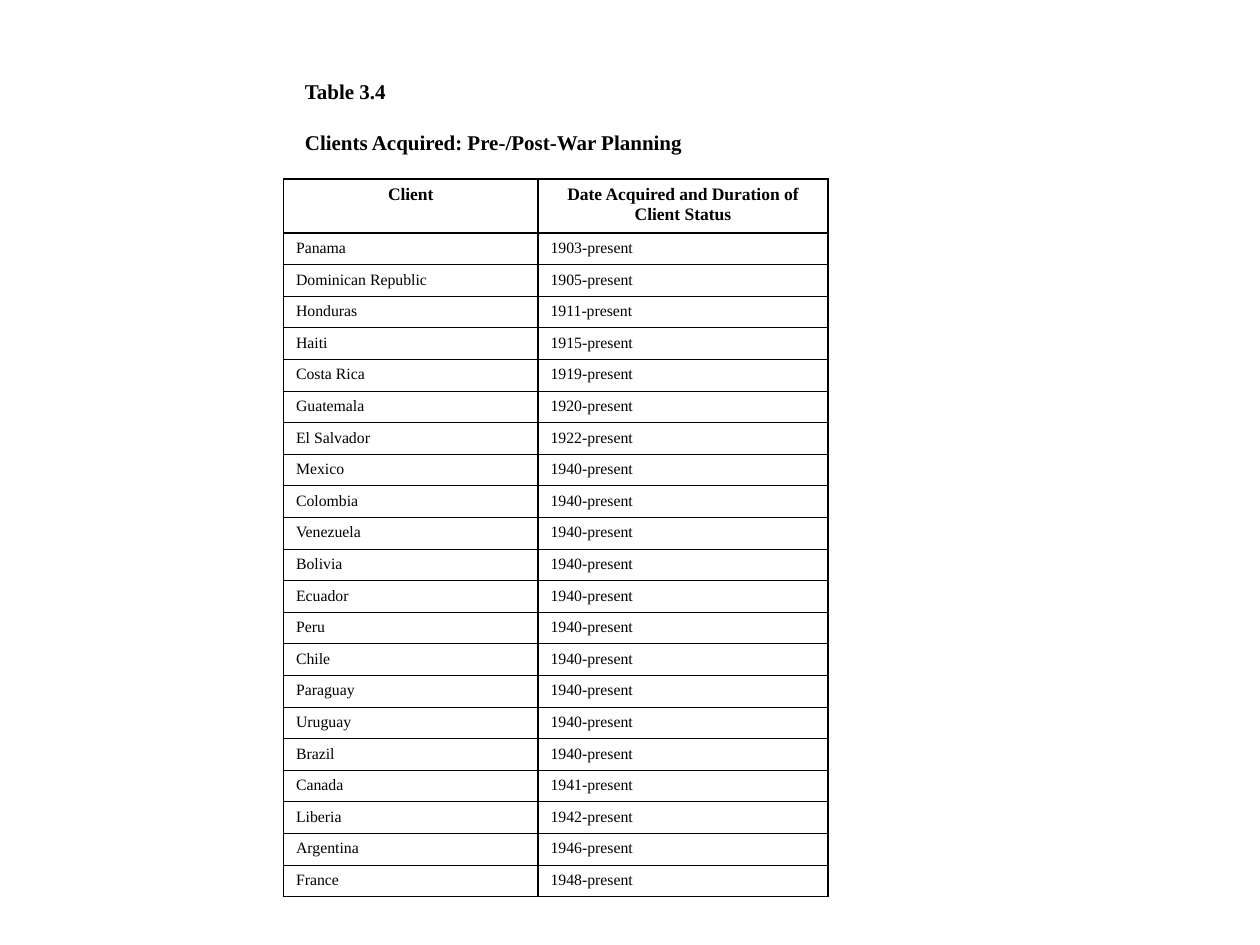
"""Build the slide that lists clients acquired in pre- and post-war planning."""
from lxml import etree
from pptx import Presentation
from pptx.dml.color import RGBColor
from pptx.enum.text import MSO_ANCHOR, MSO_AUTO_SIZE, PP_ALIGN
from pptx.oxml.ns import qn
from pptx.util import Inches, Pt

TOP = MSO_ANCHOR.TOP
FIXED = MSO_AUTO_SIZE.NONE
LEFT, CENTER = PP_ALIGN.LEFT, PP_ALIGN.CENTER
TITLE_ONLY = 5
HEADING = ["Table 3.4", "Clients Acquired: Pre-/Post-War Planning"]
HEADERS = ("Client", "Date Acquired and Duration of Client Status")
CLIENTS_BY_YEAR = {
    1903: ["Panama"],
    1905: ["Dominican Republic"],
    1911: ["Honduras"],
    1915: ["Haiti"],
    1919: ["Costa Rica"],
    1920: ["Guatemala"],
    1922: ["El Salvador"],
    1940: ["Mexico", "Colombia", "Venezuela", "Bolivia", "Ecuador",
           "Peru", "Chile", "Paraguay", "Uruguay", "Brazil"],
    1941: ["Canada"],
    1942: ["Liberia"],
    1946: ["Argentina"],
    1948: ["France"],
}


def color(value):
    return RGBColor.from_string(value)


def write(para, text, size=9, bold=False, align=LEFT, before=0, font="Times New Roman", ink="000000"):
    para.alignment = align
    para.space_before = Pt(before)
    span = para.add_run()
    span.text = text
    span.font.name = font
    span.font.size = Pt(size)
    span.font.bold = bold
    span.font.color.rgb = color(ink)


class Page:
    def __init__(self, deck, ink="000000"):
        self.deck = deck
        self.ink = ink
        self.slide = deck.slides.add_slide(deck.slide_layouts[TITLE_ONLY])

    def across(self, share):
        return round(self.deck.slide_width * share)

    def down(self, share):
        return round(self.deck.slide_height * share)

    def title(self, lines, left, top, width, height):
        box = self.slide.shapes.title
        box.left, box.top = self.across(left), self.down(top)
        box.width, box.height = self.across(width), self.down(height)
        frame = box.text_frame
        frame.word_wrap = True
        frame.auto_size = FIXED
        frame.vertical_anchor = TOP
        frame.margin_left = frame.margin_right = 0
        frame.margin_top, frame.margin_bottom = Inches(0.17), Inches(0.04)
        for index, line in enumerate(lines):
            para = frame.add_paragraph() if index else frame.paragraphs[0]
            write(para, line, size=12, bold=True, before=15 if index else 0, ink=self.ink)

    def borders(self, cell, **widths):
        properties = cell._tc.get_or_add_tcPr()
        for index, side in enumerate("LRTB"):
            line = etree.Element(qn(f"a:ln{side}"), w=str(Pt(widths[side])))
            fill = etree.SubElement(line, qn("a:solidFill"))
            etree.SubElement(fill, qn("a:srgbClr"), val=self.ink)
            properties.insert(index, line)

    def table(self, rows, left, top, columns, header_height, row_height):
        heights = [header_height] + [row_height] * (len(rows) - 1)
        table = self.slide.shapes.add_table(
            len(rows), len(columns), self.across(left), self.down(top),
            self.across(sum(columns)), self.down(sum(heights))).table
        table.horz_banding = False
        for column, width in zip(table.columns, columns):
            column.width = self.across(width)
        for row_index, (row, values) in enumerate(zip(table.rows, rows)):
            row.height = self.down(heights[row_index])
            header = row_index == 0
            for column_index, (cell, text) in enumerate(zip(row.cells, values)):
                cell.fill.background()
                first, last = column_index == 0, column_index == len(columns) - 1
                self.borders(cell,
                             L=1 if header or first else 0.75,
                             R=1 if header or last else 0.75,
                             T=1 if row_index < 2 else 0.75,
                             B=1 if header else 0.75)
                write(cell.text_frame.paragraphs[0], text, size=10 if header else 9,
                      bold=header, align=CENTER if header else LEFT, ink=self.ink)


def main():
    deck = Presentation()
    deck.slide_width, deck.slide_height = Inches(10), Inches(7.5)
    page = Page(deck)
    page.title(HEADING, left=0.242, top=0.06, width=0.333, height=0.148)
    rows = [HEADERS] + [(client, f"{year}-present")
                        for year, clients in CLIENTS_BY_YEAR.items() for client in clients]
    header_height = 0.43 / 7.5
    row_height = (5.7 / 7.5 - header_height) / (len(rows) - 1)
    page.table(rows, left=0.225, top=1.42 / 7.5, columns=(0.202, 0.23),
               header_height=header_height, row_height=row_height)
    deck.save("out.pptx")


if __name__ == "__main__":
    main()
